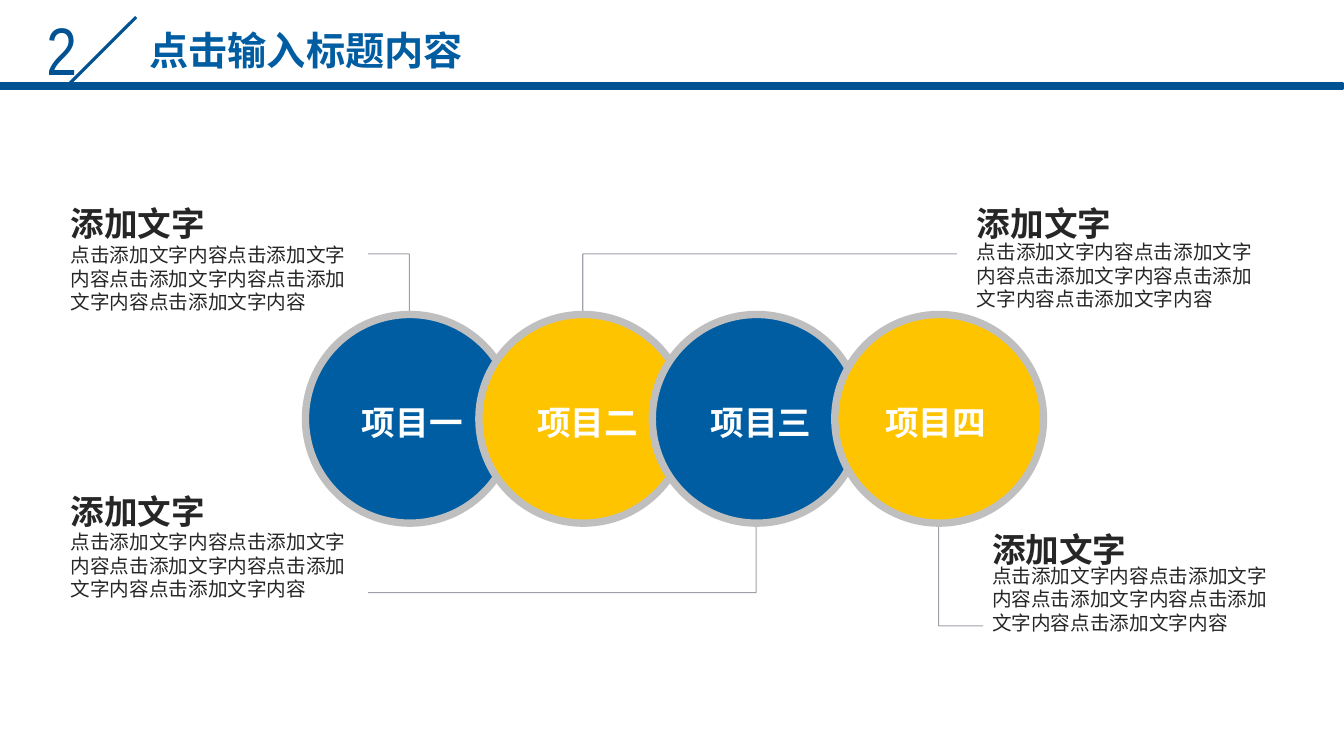
from lxml.etree import SubElement
from pptx import Presentation
from pptx.dml.color import RGBColor
from pptx.enum.shapes import MSO_CONNECTOR, MSO_SHAPE
from pptx.enum.text import MSO_ANCHOR, MSO_AUTO_SIZE, PP_ALIGN
from pptx.oxml.ns import qn
from pptx.util import Pt

EMU_PER_PX = 9144
CJK_FONT = "Noto Sans CJK SC"
NAVY = "005292"
BLUE = "005DA2"
YELLOW = "FFC400"
DARK = "262626"
RING = "BFBFBF"
LEADER = "414455"
CIRCLE_TOP = 312
CIRCLE_SIZE = 207
BODY_TEXT = "点击添加文字内容" * 5


def px(value):
    return int(value * EMU_PER_PX)


def color(hex_string):
    return RGBColor.from_string(hex_string)


def write(shape, text, size, hex_string, inset_top, line_height=None,
          font=CJK_FONT, bold=False, align=PP_ALIGN.LEFT):
    frame = shape.text_frame
    frame.text = text
    frame.word_wrap = True
    frame.auto_size = MSO_AUTO_SIZE.NONE
    frame.vertical_anchor = MSO_ANCHOR.TOP
    frame.margin_left = frame.margin_right = px(9)
    frame.margin_top, frame.margin_bottom = px(inset_top), 0
    paragraph = frame.paragraphs[0]
    paragraph.alignment = align
    paragraph.space_before = Pt(0)
    if line_height:
        paragraph.line_spacing = Pt(line_height)
    run = paragraph.runs[0]
    run.font.size = Pt(size)
    run.font.bold = bold
    run.font.color.rgb = color(hex_string)
    run.font.name = font
    SubElement(run.font._element, qn("a:ea"), typeface=font)


def add_text(slide, left, top, width, height, *content, **style):
    box = slide.shapes.add_textbox(px(left), px(top), px(width), px(height))
    write(box, *content, **style)


def add_filled(slide, kind, left, top, width, height, fill, line=None, weight=0):
    shape = slide.shapes.add_shape(kind, px(left), px(top), px(width), px(height))
    shape.shadow.inherit = False
    shape.fill.solid()
    shape.fill.fore_color.rgb = color(fill)
    if line:
        shape.line.color.rgb = color(line)
        shape.line.width = Pt(weight)
    else:
        shape.line.fill.background()
    return shape


def add_line(slide, start, end, hex_string, weight, opacity=100):
    line = slide.shapes.add_connector(
        MSO_CONNECTOR.STRAIGHT, *map(px, (*start, *end)))
    line.line.color.rgb = color(hex_string)
    line.line.width = Pt(weight)
    properties = line._element.spPr
    if opacity < 100:
        fill = properties.find(".//" + qn("a:srgbClr"))
        SubElement(fill, qn("a:alpha"), val=str(opacity * 1000))
    SubElement(properties, qn("a:effectLst"))


def add_header(slide, left, top, width):
    add_text(slide, left + 37, top - 3, 50, 91, "2", 48, NAVY, 11,
             font="Arial Narrow")
    add_line(slide, (left + 135, top + 17), (left + 68, top + 84), NAVY, 2.25)
    add_filled(slide, MSO_SHAPE.RECTANGLE, left, top + 83, width, 5, NAVY, NAVY, 2)
    title = slide.shapes.title
    title.left, title.top = px(left + 124), px(top + 19)
    title.width, title.height = px(359), px(57)
    write(title, "点击输入标题内容", 28, BLUE, 7, 34, bold=True,
          align=PP_ALIGN.CENTER)


def add_callout(slide, left, top, body_offset, body_height):
    add_text(slide, left, top, 304, 43, "添加文字", 24, DARK, 24, 29, bold=True)
    add_text(slide, left, top + body_offset, 304, body_height,
             BODY_TEXT, 14, DARK, 7, 16.8)


def add_leader(slide, circle_left, level, end):
    center = circle_left + CIRCLE_SIZE // 2
    edge = CIRCLE_TOP if level < CIRCLE_TOP else CIRCLE_TOP + CIRCLE_SIZE
    corner = (center, level)
    add_line(slide, (center, edge), corner, LEADER, 0.75, 50)
    add_line(slide, corner, (end, level), LEADER, 0.75, 50)


def add_project(slide, left, top, label_offset, label, fill):
    add_filled(slide, MSO_SHAPE.OVAL, left, top, CIRCLE_SIZE, CIRCLE_SIZE,
               fill, RING, 5.25)
    plate = add_filled(slide, MSO_SHAPE.RECTANGLE, left + label_offset, top + 78,
                       134, 62, fill)
    write(plate, label, 24, "FFFFFF", 8, 29, bold=True)


def main():
    presentation = Presentation()
    presentation.slide_width, presentation.slide_height = px(1333), px(750)
    slide = presentation.slides.add_slide(presentation.slide_layouts[5])
    add_header(slide, 0, 0, 1332)

    callouts = [(61, 177, 57, 126), (61, 463, 56, 138),
                (960, 177, 54, 138), (975, 500, 52, 138)]
    for callout in callouts:
        add_callout(slide, *callout)

    projects = [
        (303, 47, "项目一", BLUE, 252, 365),
        (475, 49, "项目二", YELLOW, 252, 949),
        (647, 49, "项目三", BLUE, 588, 365),
        (828, 41, "项目四", YELLOW, 621, 975),
    ]
    for left, _, _, _, level, end in projects:
        add_leader(slide, left, level, end)
    for left, label_offset, label, fill, _, _ in projects:
        add_project(slide, left, CIRCLE_TOP, label_offset, label, fill)

    presentation.save("out.pptx")


if __name__ == "__main__":
    main()
